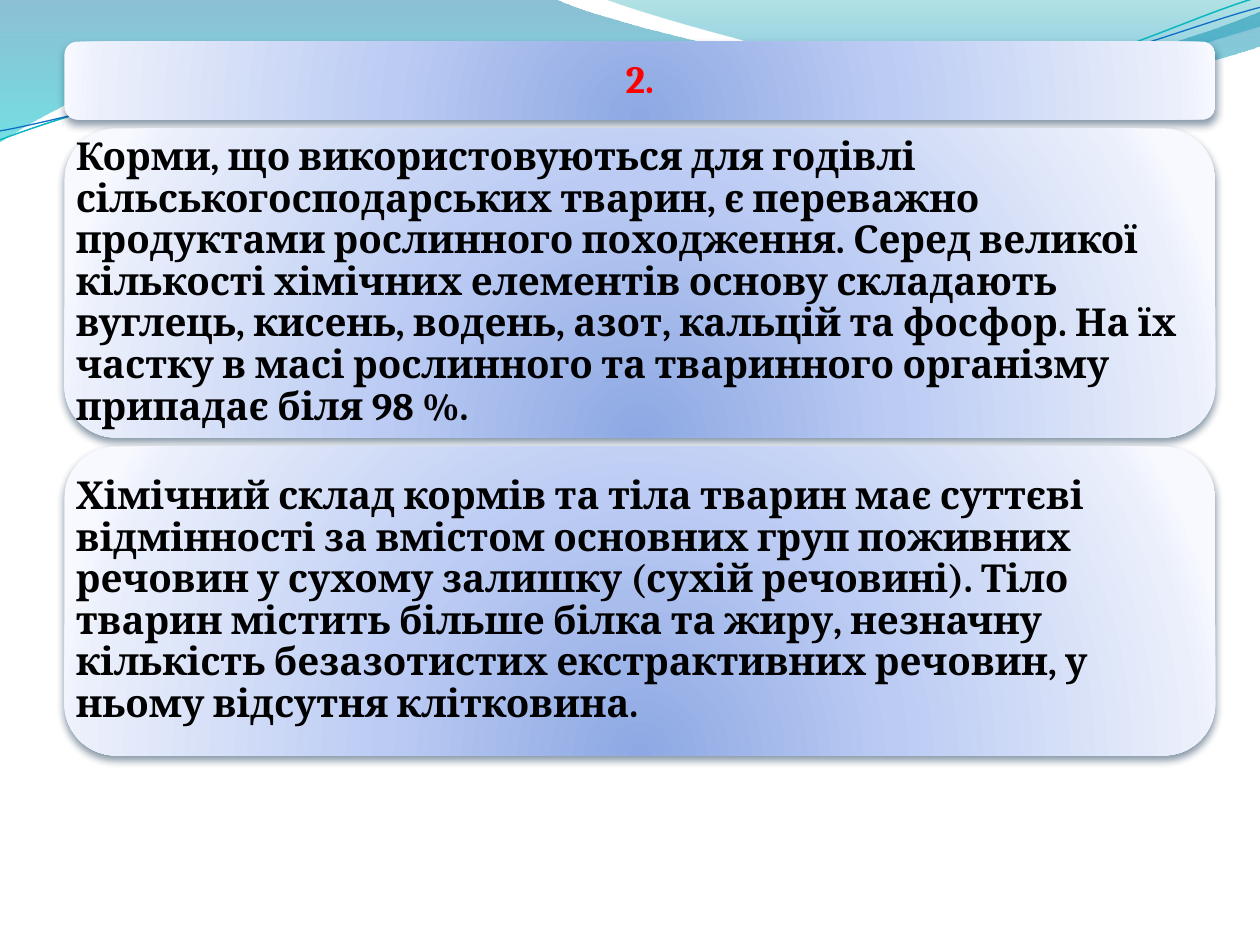
from lxml import etree
from pptx import Presentation
from pptx.dml.color import RGBColor
from pptx.enum import shapes, text
from pptx.oxml import ns
from pptx.util import Cm, Pt

CARD_STOPS = [(0, "8DA8E3", 100), (43, "BBCBF3", 100), (93, "EAEFFB", 100), (100, "F7F9FF", 100)]
CARD_GLOW = {"l": 50, "t": 130, "r": 50, "b": -30}
PARAGRAPHS = [
    "Корми, що використовуються для годівлі сільськогосподарських тварин, є переважно "
    "продуктами рослинного походження. Серед великої кількості хімічних елементів основу "
    "складають вуглець, кисень, водень, азот, кальцій та фосфор. На їх частку в масі "
    "рослинного та тваринного організму припадає біля 98 %.",
    "Хімічний склад кормів та тіла тварин має суттєві відмінності за вмістом основних груп "
    "поживних речовин у сухому залишку (сухій речовині). Тіло тварин містить більше білка та "
    "жиру, незначну кількість безазотистих екстрактивних речовин, у ньому відсутня клітковина.",
]

# Wave outlines in cm: a pair is a straight step, six numbers are a Bézier curve
UPPER_WAVE = [(0, 0), (11.18, -0.03), (12.09, 0.43, 16.87, 1.6, 19.25, 1.6),
              (21.67, 1.6, 24.33, 0.66, 25.4, 0.23), (25.43, 0.91),
              (24.97, 1.12, 22.1, 1.93, 18.95, 1.9), (15.8, 1.9, 9.7, 0.71, 6.53, 0.86),
              (3.28, 0.91, 1.17, 2.11, -0.03, 2.87)]
RIGHT_WAVE = [(12.17, -0.03), (12.93, 0.28, 17.32, 1.57, 19.53, 1.65),
              (21.74, 1.75, 24.41, 0.81, 25.4, 0.53), (25.4, 0)]
TEAL_LINE = [(0, 2.82), (1.22, 2.36, 4.01, 1.45, 7.04, 1.32),
             (10.03, 1.19, 15.06, 2.26, 18.11, 2.03), (21.16, 1.8, 23.83, 0.38, 25.35, -0.05)]
BLUE_LINE = [(0, 2.64), (1.19, 2.44, 4.17, 1.55, 7.19, 1.42),
             (10.24, 1.3, 15.16, 2.13, 18.21, 1.9), (21.23, 1.7, 23.9, 0.53, 25.4, 0.15)]


def color(value):
    return RGBColor.from_string(value)


def add_xml(parent, tag, **attributes):
    names = {key: str(value) for key, value in attributes.items()}
    return etree.SubElement(parent, ns.qn(tag), names)


def add_color(parent, value, opacity):
    add_xml(add_xml(parent, "a:srgbClr", val=value), "a:alpha", val=opacity * 1000)


def set_gradient(shape, stops, glow=None):
    """Fill from top to bottom, or in a circle around the glow rectangle."""
    shape.fill.background()
    properties = shape._element.spPr
    blank = properties.find(ns.qn("a:noFill"))
    gradient = etree.Element(ns.qn("a:gradFill"), rotWithShape="1")
    stop_list = add_xml(gradient, "a:gsLst")
    for position, value, opacity in stops:
        add_color(add_xml(stop_list, "a:gs", pos=position * 1000), value, opacity)
    if glow:
        circle = add_xml(gradient, "a:path", path="circle")
        add_xml(circle, "a:fillToRect", **{side: share * 1000 for side, share in glow.items()})
    else:
        add_xml(gradient, "a:lin", ang=90 * 60000, scaled=1)
    properties.replace(blank, gradient)


def add_shadow(shape):
    shape.shadow.inherit = False
    effects = shape._element.spPr.find(ns.qn("a:effectLst"))
    shadow = add_xml(effects, "a:outerShdw", blurRad=Pt(4.5), dist=Pt(3),
                     dir=90 * 60000, rotWithShape=0)
    add_color(shadow, "042747", 48)


def add_outline(page, outline, close):
    """Lay out every point as a straight step, then join triples into curves."""
    points = [(Cm(x), Cm(y)) for part in outline for x, y in zip(part[::2], part[1::2])]
    builder = page.shapes.build_freeform(*points[0])
    builder.add_line_segments(points[1:], close=close)
    shape = builder.convert_to_shape()
    shape.shadow.inherit = False
    steps = iter(list(shape._element.iter(ns.qn("a:lnTo"))))
    for part in outline[1:]:
        group = [next(steps) for _ in range(len(part) // 2)]
        if len(group) == 3:
            curve = etree.Element(ns.qn("a:cubicBezTo"))
            group[0].addprevious(curve)
            for step in group:
                curve.append(step[0])
                step.getparent().remove(step)
    return shape


def add_waves(page):
    # Translucent bands
    for outline, stops in ((UPPER_WAVE, [(0, "0074A1", 45), (100, "00C6CF", 55)]),
                           (RIGHT_WAVE, [(0, "00A1A9", 30), (80, "008BBF", 45)])):
        band = add_outline(page, outline, True)
        set_gradient(band, stops)
        band.line.fill.background()
    # Thin lines
    for outline, value, width in ((TEAL_LINE, "0AB8BF", 0.85), (BLUE_LINE, "0F6FC6", 0.75)):
        curve = add_outline(page, outline, False)
        curve.fill.background()
        curve.line.color.rgb = color(value)
        curve.line.width = Pt(width)


def write(shape, words, value, align):
    frame = shape.text_frame
    frame.word_wrap = True
    frame.auto_size = text.MSO_AUTO_SIZE.NONE
    frame.vertical_anchor = text.MSO_ANCHOR.MIDDLE
    frame.margin_left = frame.margin_right = Cm(0.23)
    frame.margin_top = frame.margin_bottom = Cm(0.23)
    para = frame.paragraphs[0]
    para.alignment = align
    para.line_spacing = 0.9
    span = para.add_run()
    span.text = words
    span.font.name = "Cambria"
    span.font.size = Pt(22)
    span.font.bold = True
    span.font.color.rgb = color(value)


def add_card(page, box):
    card = page.shapes.add_shape(shapes.MSO_SHAPE.ROUNDED_RECTANGLE, *box)
    set_gradient(card, CARD_STOPS, CARD_GLOW)
    card.line.fill.background()
    add_shadow(card)


def add_title_card(page, box):
    add_card(page, box)
    title = page.shapes.title
    title.left, title.top, title.width, title.height = box
    write(title, "2.", "FF0000", text.PP_ALIGN.CENTER)
    page.shapes._spTree.append(title._element)  # bring the title in front of its card


def add_text_card(page, box, words):
    add_card(page, box)
    write(page.shapes.add_textbox(*box), words, "000000", text.PP_ALIGN.LEFT)


def main():
    deck = Presentation()
    deck.slide_width, deck.slide_height = Cm(25.4), Cm(19.05)
    page = deck.slides.add_slide(deck.slide_layouts[5])
    add_waves(page)

    # Stack of cards
    left, top, width, gap = Cm(1.3), Cm(0.84), Cm(23.2), Cm(0.18)
    title_height, text_height = Cm(1.57), Cm(6.23)
    add_title_card(page, (left, top, width, title_height))
    top += title_height + gap
    for words in PARAGRAPHS:
        add_text_card(page, (left, top, width, text_height), words)
        top += text_height + gap
    deck.save("out.pptx")


if __name__ == "__main__":
    main()
